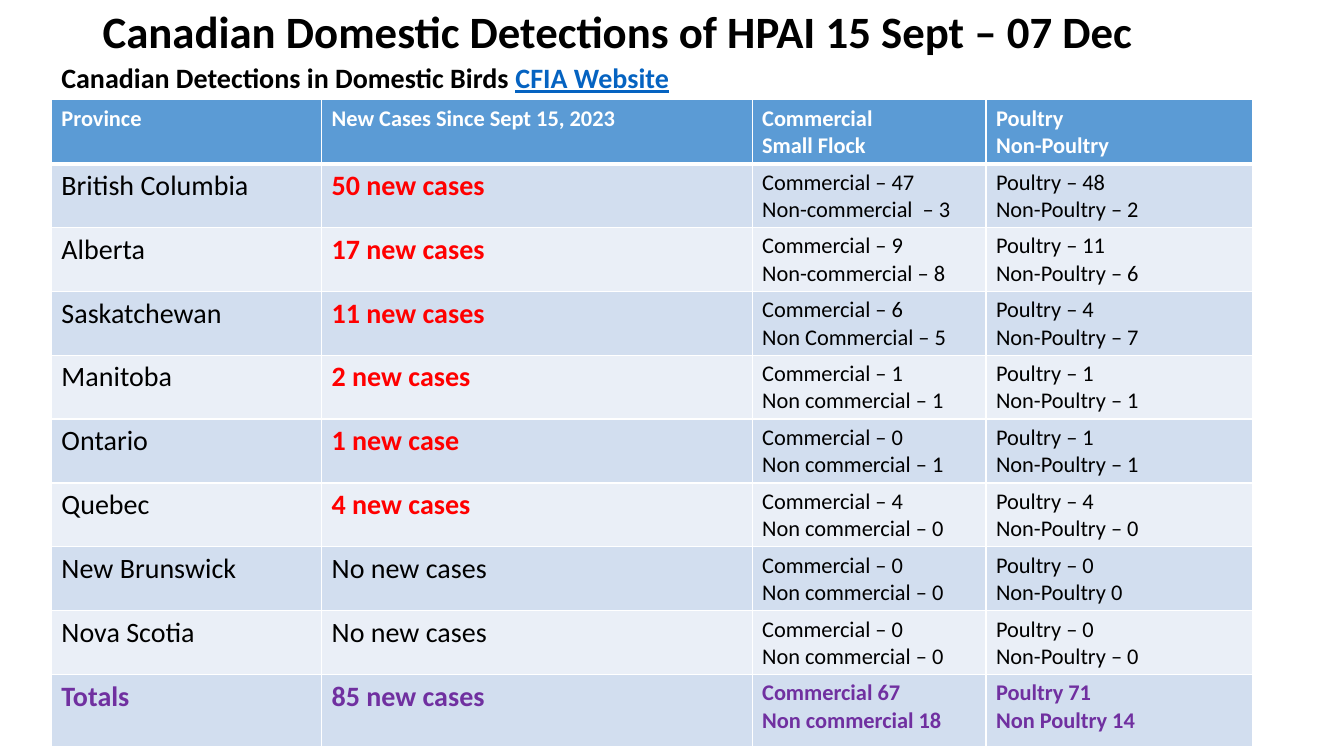
from dataclasses import dataclass

from lxml.etree import SubElement
from pptx import Presentation
from pptx.dml.color import RGBColor
from pptx.enum.text import MSO_ANCHOR
from pptx.oxml.ns import qn
from pptx.util import Inches, Pt


@dataclass(frozen=True)
class Theme:
    font: str = "Calibri"
    black: str = "000000"
    white: str = "FFFFFF"
    red: str = "FF0000"
    purple: str = "7030A0"
    link: str = "0563C1"
    head: str = "5B9BD5"
    bands: tuple = ("D2DEEF", "EAEFF7")
    title: int = 32
    large: int = 20
    small: int = 16


THEME = Theme()

COLS = (2.68, 4.27, 2.32, 2.64)
HEAD = ("Province", "New Cases Since Sept 15, 2023",
        "Commercial\nSmall Flock", "Poultry\nNon-Poultry")
CASES = (
    ("British Columbia", "50 new cases",
     "Commercial – 47\nNon-commercial  – 3", "Poultry – 48\nNon-Poultry – 2"),
    ("Alberta", "17 new cases",
     "Commercial – 9\nNon-commercial – 8", "Poultry – 11\nNon-Poultry – 6"),
    ("Saskatchewan", "11 new cases",
     "Commercial – 6\nNon Commercial – 5", "Poultry – 4\nNon-Poultry – 7"),
    ("Manitoba", "2 new cases",
     "Commercial – 1\nNon commercial – 1", "Poultry – 1\nNon-Poultry – 1"),
    ("Ontario", "1 new case",
     "Commercial – 0\nNon commercial – 1", "Poultry – 1\nNon-Poultry – 1"),
    ("Quebec", "4 new cases",
     "Commercial – 4\nNon commercial – 0", "Poultry – 4\nNon-Poultry – 0"),
    ("New Brunswick", "No new cases",
     "Commercial – 0\nNon commercial – 0", "Poultry – 0\nNon-Poultry 0"),
    ("Nova Scotia", "No new cases",
     "Commercial – 0\nNon commercial – 0", "Poultry – 0\nNon-Poultry – 0"),
)
TOTALS = ("Totals", "85 new cases",
          "Commercial 67\nNon commercial 18", "Poultry 71\nNon Poultry 14")


def add_run(para, text, size, color, bold=False, line=False):
    run = para.add_run()
    run.text = text
    font = run.font
    font.name, font.size, font.bold = THEME.font, Pt(size), bold
    font.underline = line
    font.color.rgb = RGBColor.from_string(color)


def add_label(slide, box, anchor):
    """Add an empty text box and return its first paragraph."""
    frame = slide.shapes.add_textbox(*map(Inches, box)).text_frame
    frame.word_wrap = True
    frame.vertical_anchor = anchor
    para = frame.paragraphs[0]
    para.line_spacing = 0.9
    return para


def add_border(cell, side, width):
    props = cell._tc.get_or_add_tcPr()
    edge = SubElement(props, qn(f"a:{side}"), w=str(Pt(width)))
    fill = SubElement(edge, qn("a:solidFill"))
    SubElement(fill, qn("a:srgbClr"), val=THEME.white)


def fill_cell(cell, text, size, color, bold, back, base=1):
    """Write one line per paragraph; base is the bottom border width."""
    for side, width in (("lnL", 1), ("lnR", 1), ("lnT", 1), ("lnB", base)):
        add_border(cell, side, width)
    cell.fill.solid()
    cell.fill.fore_color.rgb = RGBColor.from_string(back)
    frame = cell.text_frame
    for i, line in enumerate(text.split("\n")):
        para = frame.add_paragraph() if i else frame.paragraphs[0]
        add_run(para, line, size, color, bold)


def pick_style(row, col):
    """Return the size, colour and weight of a cell below the header."""
    size = THEME.large if col < 2 else THEME.small
    if row is TOTALS:
        return size, THEME.purple, True
    if col == 1 and not row[1].startswith("No"):
        return size, THEME.red, True
    return size, THEME.black, False


def add_cases(slide):
    rows = (*CASES, TOTALS)
    table = slide.shapes.add_table(
        len(rows) + 1, len(COLS), Inches(0.51), Inches(0.99),
        Inches(sum(COLS)), Inches(6.39)).table
    for col, width in zip(table.columns, COLS):
        col.width = Inches(width)
    for row in table.rows:
        row.height = Inches(0.63)
    table.rows[len(rows)].height = Inches(0.72)

    for col, text in enumerate(HEAD):
        fill_cell(table.cell(0, col), text, THEME.small, THEME.white,
                  True, THEME.head, base=3)
    for i, row in enumerate(rows):
        for col, text in enumerate(row):
            fill_cell(table.cell(i + 1, col), text, *pick_style(row, col),
                      THEME.bands[i % 2])
    for col in range(len(COLS)):
        top = table.cell(1, col)._tc.tcPr.find(qn("a:lnT"))
        top.set("w", str(Pt(3)))


def main():
    deck = Presentation()
    deck.slide_width, deck.slide_height = Inches(13.33), Inches(7.5)
    slide = deck.slides.add_slide(deck.slide_layouts[6])

    title = add_label(slide, (0.92, -0.04, 11.5, 0.76), MSO_ANCHOR.MIDDLE)
    add_run(title, "Canadian Domestic Detections of HPAI 15 Sept – 07 Dec",
            THEME.title, THEME.black, bold=True)

    source = add_label(slide, (0.51, 0.45, 12.51, 0.54), MSO_ANCHOR.BOTTOM)
    add_run(source, "Canadian Detections in Domestic Birds ",
            THEME.large, THEME.black, bold=True)
    add_run(source, "CFIA Website", THEME.large, THEME.link,
            bold=True, line=True)

    add_cases(slide)
    deck.save("out.pptx")


if __name__ == "__main__":
    main()
